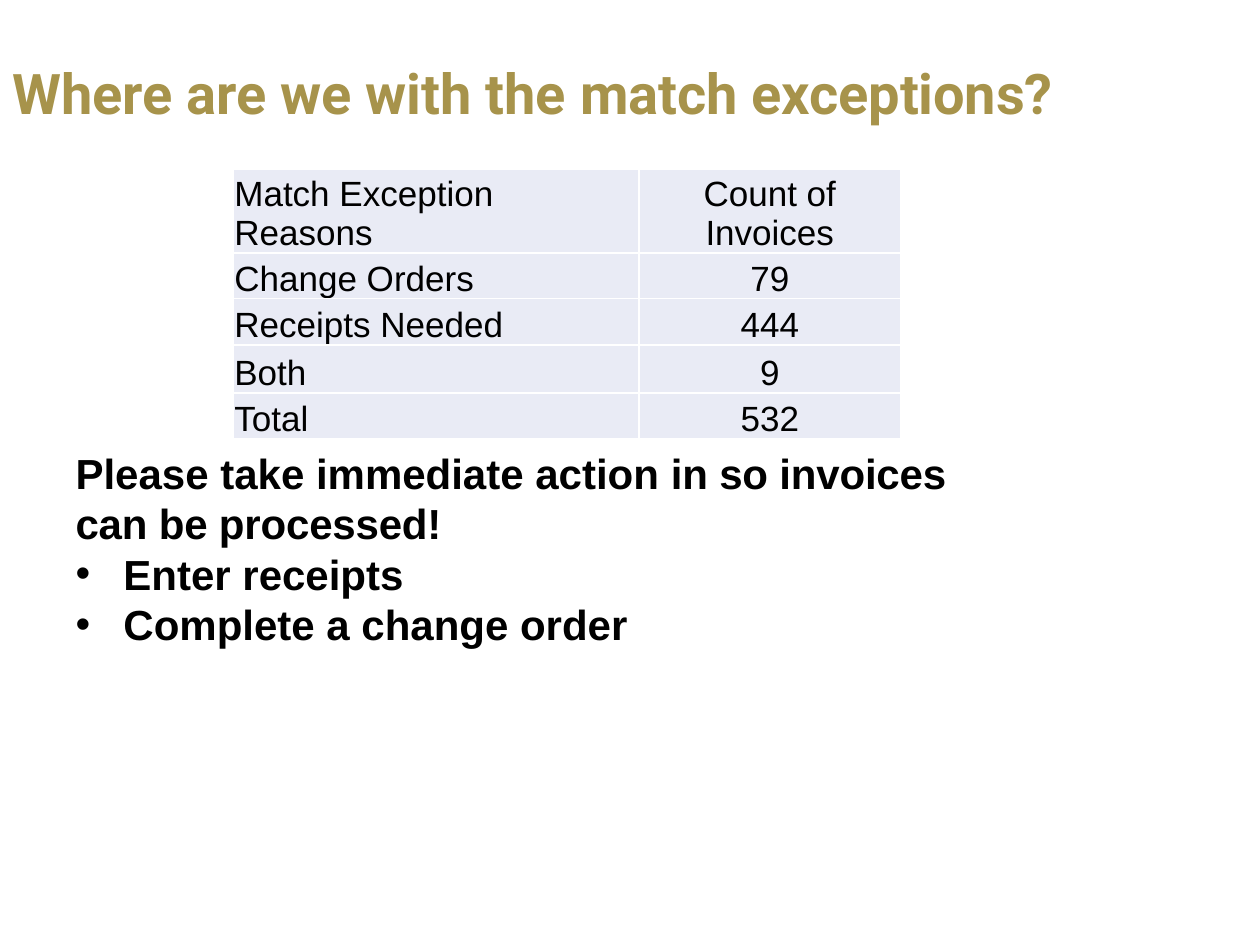
from lxml import etree
from pptx import Presentation
from pptx.dml.color import RGBColor
from pptx.enum.text import MSO_ANCHOR, MSO_AUTO_SIZE, PP_ALIGN
from pptx.oxml.ns import qn
from pptx.util import Inches, Pt

LEFT, CENTER = PP_ALIGN.LEFT, PP_ALIGN.CENTER
MIDDLE, BOTTOM = MSO_ANCHOR.MIDDLE, MSO_ANCHOR.BOTTOM
NO_AUTOFIT = MSO_AUTO_SIZE.NONE
COLORS = {"gold": "A7934B", "text": "000000", "cell": "E9EBF5", "border": "FFFFFF"}
TIGHT = -0.1

TITLE = [("Where are ", TIGHT), ("we with the ", 0), ("match exceptions?", TIGHT)]
CALL = [("Please take immediate action ", 0), ("in so invoices can be processed!", TIGHT)]
ACTIONS = ["Enter receipts", "Complete a change order"]
ROWS = [
    ("Match Exception Reasons", "Count of Invoices"),
    ("Change Orders", "79"),
    ("Receipts Needed", "444"),
    ("Both", "9"),
    ("Total", "532"),
]


def rgb(name):
    return RGBColor.from_string(COLORS[name])


def place(shape, left, top, width, height):
    shape.left, shape.top = Inches(left), Inches(top)
    shape.width, shape.height = Inches(width), Inches(height)


def add_run(p, text, size, font="Arial", color="text", bold=False, spacing=0):
    r = p.add_run()
    r.text = text
    r.font.name, r.font.size, r.font.bold = font, Pt(size), bold
    r.font.color.rgb = rgb(color)
    if spacing:
        r.font._element.set("spc", str(round(spacing * 100)))


def set_bullet(p, char=None, indent=0):
    """Give the paragraph a hanging bullet, or none when char is not given."""
    pPr = p._p.get_or_add_pPr()
    pPr.set("marL", str(Inches(indent)))
    pPr.set("indent", str(-Inches(indent)))
    if char:
        etree.SubElement(pPr, qn("a:buFont"), typeface="Arial")
        etree.SubElement(pPr, qn("a:buChar"), char=char)
    else:
        etree.SubElement(pPr, qn("a:buNone"))


def set_borders(cell, color, width):
    tcPr = cell._tc.get_or_add_tcPr()
    for side in ("lnL", "lnR", "lnT", "lnB"):
        ln = etree.SubElement(tcPr, qn(f"a:{side}"), w=str(Pt(width)))
        fill = etree.SubElement(ln, qn("a:solidFill"))
        etree.SubElement(fill, qn("a:srgbClr"), val=COLORS[color])


def fill_title(title):
    place(title, 0.09, 0.45, 8.83, 0.56)
    tf = title.text_frame
    tf.auto_size, tf.vertical_anchor = NO_AUTOFIT, MIDDLE
    tf.margin_left = tf.margin_right = tf.margin_bottom = 0
    tf.margin_top = Inches(0.01)
    p = tf.paragraphs[0]
    p.alignment = LEFT
    p._p.get_or_add_pPr().set("marL", str(Inches(0.01)))
    for text, spacing in TITLE:
        add_run(p, text, 32, "Roboto", "gold", True, spacing)


def fill_body(body):
    place(body, 0.5, 3.5, 7.25, 1.72)
    tf = body.text_frame
    tf.auto_size = NO_AUTOFIT
    p = tf.paragraphs[0]
    set_bullet(p)
    p.space_before = Pt(0)
    for text, spacing in CALL:
        add_run(p, text, 24, bold=True, spacing=spacing)
    for action in ACTIONS:
        p = tf.add_paragraph()
        set_bullet(p, "•", 0.38)
        p.space_before = Pt(0)
        add_run(p, action, 24, bold=True)


def fill_cell(cell, text, alignment):
    set_borders(cell, "border", 1)
    cell.fill.solid()
    cell.fill.fore_color.rgb = rgb("cell")
    cell.vertical_anchor = BOTTOM
    cell.margin_left = cell.margin_right = cell.margin_top = Inches(0.01)
    cell.margin_bottom = 0
    p = cell.text_frame.paragraphs[0]
    p.alignment = alignment
    add_run(p, text, 20)


def add_exceptions_table(s):
    frame = s.shapes.add_table(len(ROWS), 2, Inches(1.85), Inches(1.34),
                               Inches(5.3), Inches(2.15))
    table = frame.table
    for column, width in zip(table.columns, (3.22, 2.08)):
        column.width = Inches(width)
    for row, height in zip(table.rows, (0.67, 0.36, 0.37, 0.38, 0.36)):
        row.height = Inches(height)
    for i, values in enumerate(ROWS):
        for j, (text, alignment) in enumerate(zip(values, (LEFT, CENTER))):
            fill_cell(table.cell(i, j), text, alignment)


def main():
    prs = Presentation()
    prs.slide_width, prs.slide_height = Inches(10), Inches(7.5)
    s = prs.slides.add_slide(prs.slide_layouts[1])
    fill_title(s.shapes.title)
    fill_body(s.placeholders[1])
    add_exceptions_table(s)
    prs.save("out.pptx")


if __name__ == "__main__":
    main()
